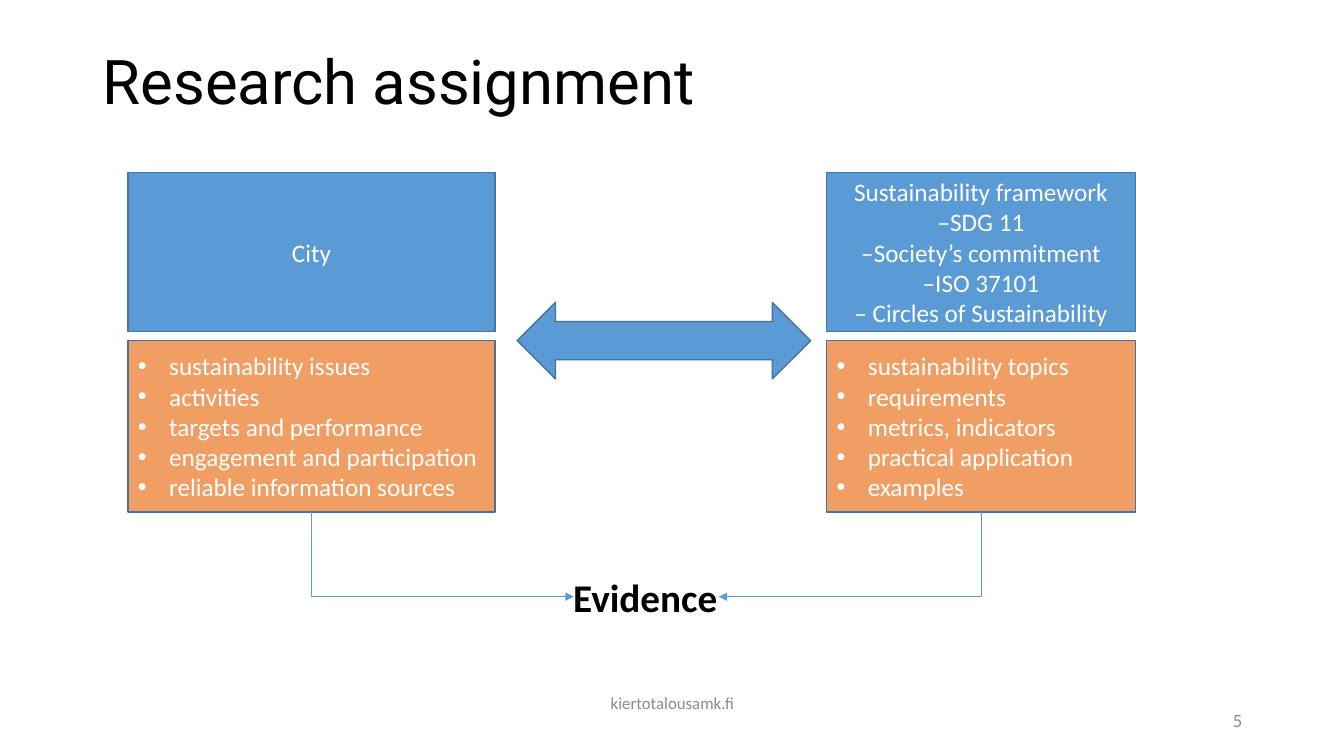
from lxml import etree
from pptx import Presentation
from pptx.dml.color import RGBColor
from pptx.enum.shapes import MSO_CONNECTOR, MSO_SHAPE
from pptx.enum.text import MSO_ANCHOR, PP_ALIGN
from pptx.oxml.ns import qn
from pptx.util import Inches, Pt

BLUE = RGBColor(0x5B, 0x9B, 0xD5)
ORANGE = RGBColor(0xF1, 0x9E, 0x65)
OUTLINE = RGBColor(0x43, 0x73, 0x9E)
GREY = RGBColor(0x8C, 0x8C, 0x8C)
WHITE = RGBColor(0xFF, 0xFF, 0xFF)
BLACK = RGBColor(0, 0, 0)

prs = Presentation()
prs.slide_width, prs.slide_height = Inches(13.33), Inches(7.5)
slide = prs.slides.add_slide(prs.slide_layouts[6])
shapes = slide.shapes


def write(shape, lines, size, color, align, font="Calibri", bold=False, bullets=False):
    frame = shape.text_frame
    frame.word_wrap = True
    frame.vertical_anchor = MSO_ANCHOR.MIDDLE
    frame.text = "\n".join(lines)
    for paragraph in frame.paragraphs:
        paragraph.alignment = align
        if bullets:
            props = paragraph._p.get_or_add_pPr()
            props.set("marL", str(Inches(0.31)))
            props.set("indent", str(-Inches(0.31)))
            etree.SubElement(props, qn("a:buFont")).set("typeface", "Arial")
            etree.SubElement(props, qn("a:buChar")).set("char", "•")
        paragraph.font.name = font
        paragraph.font.size = Pt(size)
        paragraph.font.bold = bold
        paragraph.font.color.rgb = color


def add_block(kind, left, top, width, height, fill):
    block = shapes.add_shape(kind, Inches(left), Inches(top), Inches(width), Inches(height))
    block.shadow.inherit = False
    block.fill.solid()
    block.fill.fore_color.rgb = fill
    block.line.color.rgb = OUTLINE
    block.line.width = Pt(1)
    return block


# Title, footer, page number and conclusion
labels = [
    ("Research assignment", 0.92, 0.37, 11.5, 0.93, 44, BLACK, PP_ALIGN.LEFT, "Roboto", False),
    ("kiertotalousamk.fi", 4.42, 6.77, 4.5, 0.4, 12, GREY, PP_ALIGN.CENTER, "Calibri", False),
    ("5", 9.42, 6.95, 3, 0.4, 12, GREY, PP_ALIGN.RIGHT, "Lato", False),
    ("Evidence", 5.21, 5.64, 2.38, 0.57, 28, BLACK, PP_ALIGN.CENTER, "Calibri", True),
]
for text, left, top, width, height, size, color, align, font, bold in labels:
    label = shapes.add_textbox(Inches(left), Inches(top), Inches(width), Inches(height))
    write(label, [text], size, color, align, font, bold)
    if font == "Roboto":
        label.text_frame.paragraphs[0].line_spacing = 0.9

# Two columns: subject above, its aspects below
columns = [
    (1.27, 3.64, ["City"],
     ["sustainability issues", "activities", "targets and performance",
      "engagement and participation", "reliable information sources"]),
    (8.2, 3.06,
     ["Sustainability framework", "–SDG 11", "–Society’s commitment",
      "–ISO 37101", "– Circles of Sustainability"],
     ["sustainability topics", "requirements", "metrics, indicators",
      "practical application", "examples"]),
]
for left, width, subject, aspects in columns:
    subject_box = add_block(MSO_SHAPE.RECTANGLE, left, 1.71, width, 1.58, BLUE)
    write(subject_box, subject, 18, WHITE, PP_ALIGN.CENTER)
    aspects_box = add_block(MSO_SHAPE.RECTANGLE, left, 3.38, width, 1.7, ORANGE)
    write(aspects_box, aspects, 18, WHITE, PP_ALIGN.LEFT, bullets=True)

add_block(MSO_SHAPE.LEFT_RIGHT_ARROW, 5.13, 3, 2.91, 0.76, BLUE)

# Elbow arrows run down from each column, then inward to the evidence;
# a one-bend connector starts sideways, so each is turned a quarter
DROP, RUN = 0.84, 2.6
for start_x, end_x, turn in [(3.09, 5.69, 270), (9.73, 7.13, 90)]:
    middle_x, middle_y = (start_x + end_x) / 2, 5.08 + DROP / 2
    near, far = middle_x - DROP / 2, middle_x + DROP / 2
    if turn == 270:
        near, far = far, near
    arrow = shapes.add_connector(
        MSO_CONNECTOR.ELBOW, Inches(near), Inches(middle_y - RUN / 2),
        Inches(far), Inches(middle_y + RUN / 2))
    arrow.line.color.rgb = BLUE
    arrow.line.width = Pt(0.5)
    props = arrow._element.spPr
    props.find(qn("a:xfrm")).set("rot", str(turn * 60000))
    props.find(qn("a:prstGeom")).set("prst", "bentConnector2")
    etree.SubElement(props.find(qn("a:ln")), qn("a:tailEnd")).set("type", "triangle")
    etree.SubElement(props, qn("a:effectLst"))

prs.save("out.pptx")
